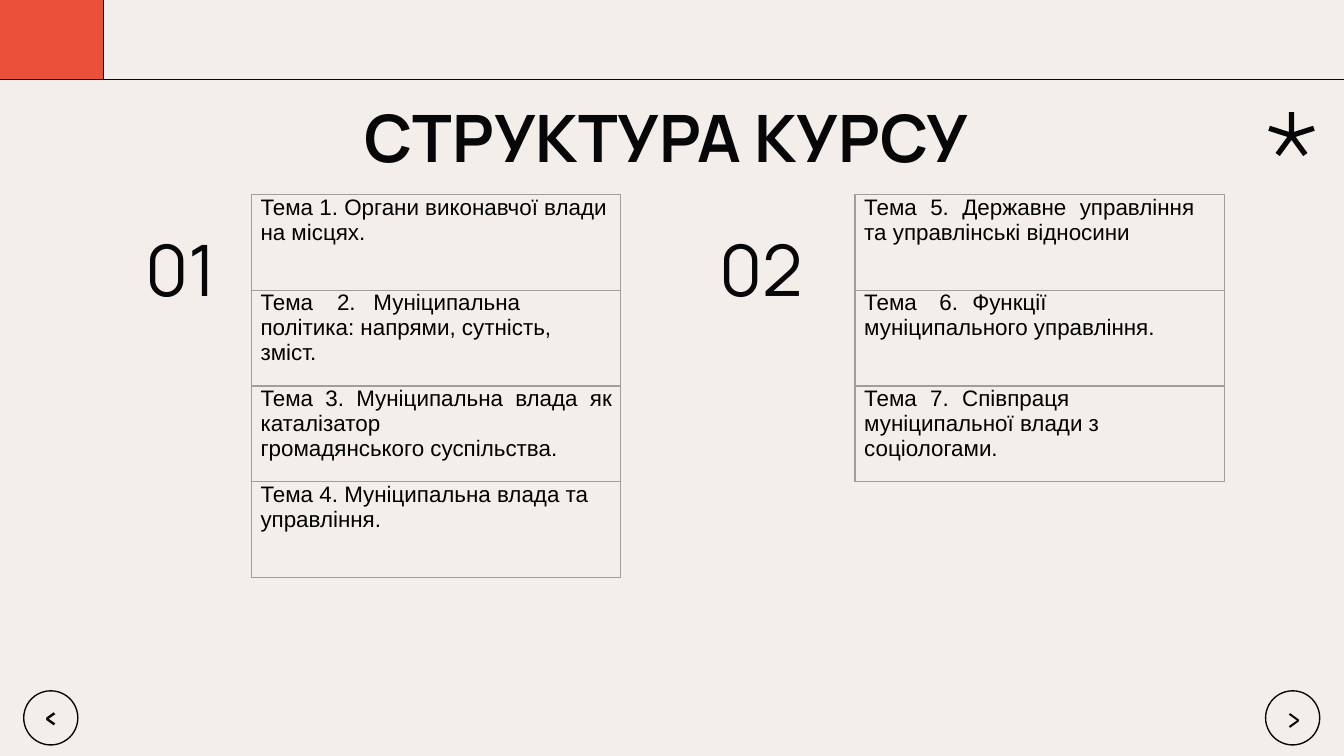
from math import cos, pi, sin

from lxml import etree
from pptx import Presentation
from pptx.dml.color import RGBColor
from pptx.enum.shapes import MSO_CONNECTOR, MSO_SHAPE
from pptx.enum.text import MSO_ANCHOR, MSO_AUTO_SIZE, PP_ALIGN
from pptx.oxml.ns import qn
from pptx.util import Pt

CENTER, LEFT, JUSTIFY = PP_ALIGN.CENTER, PP_ALIGN.LEFT, PP_ALIGN.JUSTIFY
TOP, MIDDLE = MSO_ANCHOR.TOP, MSO_ANCHOR.MIDDLE
RECT, OVAL = MSO_SHAPE.RECTANGLE, MSO_SHAPE.OVAL
INK, PAPER, ACCENT, BORDER, BLACK = "070709", "F3EEEA", "EA5138", "9E9E9E", "000000"

COL_WIDTH, ROW_HEIGHT, TABLE_TOP = 198, 51.3, 104.3

# Topics: text, alignment, tab stops in points
TOPICS_1 = [
    ("Тема 1. Органи виконавчої влади на місцях.", LEFT, []),
    ("Тема\t2.\tМуніципальна\tполітика: напрями, сутність, зміст.",
     LEFT, [41, 60.5, 145.4]),
    ("Тема 3. Муніципальна влада як каталізатор\tгромадянського суспільства.",
     JUSTIFY, [111.6]),
    ("Тема 4. Муніципальна влада та управління.", LEFT, []),
]
TOPICS_2 = [
    ("Тема 5. Державне управління та управлінські відносини", JUSTIFY, []),
    ("Тема\t6.\tФункції\tмуніципального управління.", LEFT, [40.3, 57.9, 110.2]),
    ("Тема\t7.\tСпівпраця муніципальної влади з соціологами.", LEFT, [35.3, 52.5]),
]


def rgb(color):
    return RGBColor.from_string(color)


def set_font(p, name, size, color, bold=False):
    p.font.name = name
    p.font.size = Pt(size)
    p.font.bold = bold
    p.font.color.rgb = rgb(color)


def write(s, text, name, size, bold=False, anchor=MIDDLE):
    tf = s.text_frame
    tf.word_wrap = True
    tf.auto_size = MSO_AUTO_SIZE.NONE
    tf.vertical_anchor = anchor
    tf.margin_left = tf.margin_right = tf.margin_top = tf.margin_bottom = Pt(7.2)
    p = tf.paragraphs[0]
    p.text = text
    p.alignment = CENTER
    set_font(p, name, size, INK, bold)


def style(s, fill=None, line=INK):
    s.shadow.inherit = False
    if fill:
        s.fill.solid()
        s.fill.fore_color.rgb = rgb(fill)
    else:
        s.fill.background()
    if line:
        s.line.color.rgb = rgb(line)
        s.line.width = Pt(0.75)
    else:
        s.line.fill.background()


def add_title(sp, text):
    s = sp.title
    s.left, s.top, s.width, s.height = Pt(56.2), Pt(44.6), Pt(607.6), Pt(45.4)
    write(s, text, "Manrope", 35, bold=True, anchor=TOP)


def add_number(sp, x, text):
    s = sp.add_textbox(Pt(x), Pt(121), Pt(64), Pt(45.4))
    write(s, text, "Manrope", 38)


def add_header(sp):
    line = sp.add_connector(MSO_CONNECTOR.STRAIGHT, 0, Pt(42.5), Pt(720), Pt(42.5))
    line.line.color.rgb = rgb(INK)
    line.line.width = Pt(0.75)
    etree.SubElement(line._element.spPr, qn("a:effectLst"))
    style(sp.add_shape(RECT, Pt(-1.4), Pt(-14.4), Pt(56.9), Pt(56.9)), ACCENT)


def add_asterisk(sp, cx, cy, radius, half):
    """Five arms, each with a square end; neighbours meet near the centre."""
    inner = half / sin(pi / 5)
    points = []
    for arm in range(5):
        a = -pi / 2 + arm * 2 * pi / 5
        for side in (-half, half):
            points.append((cx + radius * cos(a) - side * sin(a),
                           cy + radius * sin(a) + side * cos(a)))
        b = a + pi / 5
        points.append((cx + inner * cos(b), cy + inner * sin(b)))
    points = [(Pt(x), Pt(y)) for x, y in points]
    fb = sp.build_freeform(*points[0])
    fb.add_line_segments(points[1:], close=True)
    style(fb.convert_to_shape(), INK, line=None)


def add_button(sp, x, text, size, bold):
    s = sp.add_shape(OVAL, Pt(x), Pt(370.1), Pt(29), Pt(29))
    style(s)
    write(s, text, "Karla", size, bold)


def set_borders(cell):
    tcPr = cell._tc.get_or_add_tcPr()
    for side in ("lnL", "lnR", "lnT", "lnB"):
        ln = etree.SubElement(tcPr, qn(f"a:{side}"), w=str(Pt(0.75)))
        fill = etree.SubElement(ln, qn("a:solidFill"))
        etree.SubElement(fill, qn("a:srgbClr"), val=BORDER)


def set_tabs(p, stops):
    pPr = p._p.get_or_add_pPr()
    tabs = etree.Element(qn("a:tabLst"))
    for stop in stops:
        etree.SubElement(tabs, qn("a:tab"), pos=str(Pt(stop)), algn="l")
    pPr.insert(0, tabs)


def add_topics(sp, x, topics, right_inset):
    frame = sp.add_table(len(topics), 1, Pt(x), Pt(TABLE_TOP),
                         Pt(COL_WIDTH), Pt(ROW_HEIGHT * len(topics)))
    table = frame.table
    table.first_row = table.horz_banding = False
    for row, (text, align, stops) in zip(table.rows, topics):
        row.height = Pt(ROW_HEIGHT)
        cell = row.cells[0]
        cell.margin_top = cell.margin_bottom = 0
        cell.margin_left, cell.margin_right = Pt(5), Pt(right_inset)
        set_borders(cell)
        cell.fill.background()
        p = cell.text_frame.paragraphs[0]
        p.text = text
        p.alignment = align
        set_font(p, "Arial", 12, BLACK)
        if stops:
            set_tabs(p, stops)


def main():
    prs = Presentation()
    prs.slide_width, prs.slide_height = Pt(720), Pt(405)
    slide = prs.slides.add_slide(prs.slide_layouts[5])
    slide.background.fill.solid()
    slide.background.fill.fore_color.rgb = rgb(PAPER)
    sp = slide.shapes

    # Header and title
    add_header(sp)
    add_asterisk(sp, 691.9, 72.6, 12.6, 1.4)
    add_title(sp, "СТРУКТУРА КУРСУ ")

    # Numbered topic tables
    add_number(sp, 64.8, "01")
    add_topics(sp, 134.6, TOPICS_1, 4.5)
    add_number(sp, 375.8, "02")
    add_topics(sp, 458, TOPICS_2, 16)

    # Navigation buttons
    add_button(sp, 12.7, "<", 12, True)
    add_button(sp, 678, ">", 15, False)

    prs.save("out.pptx")


if __name__ == "__main__":
    main()
